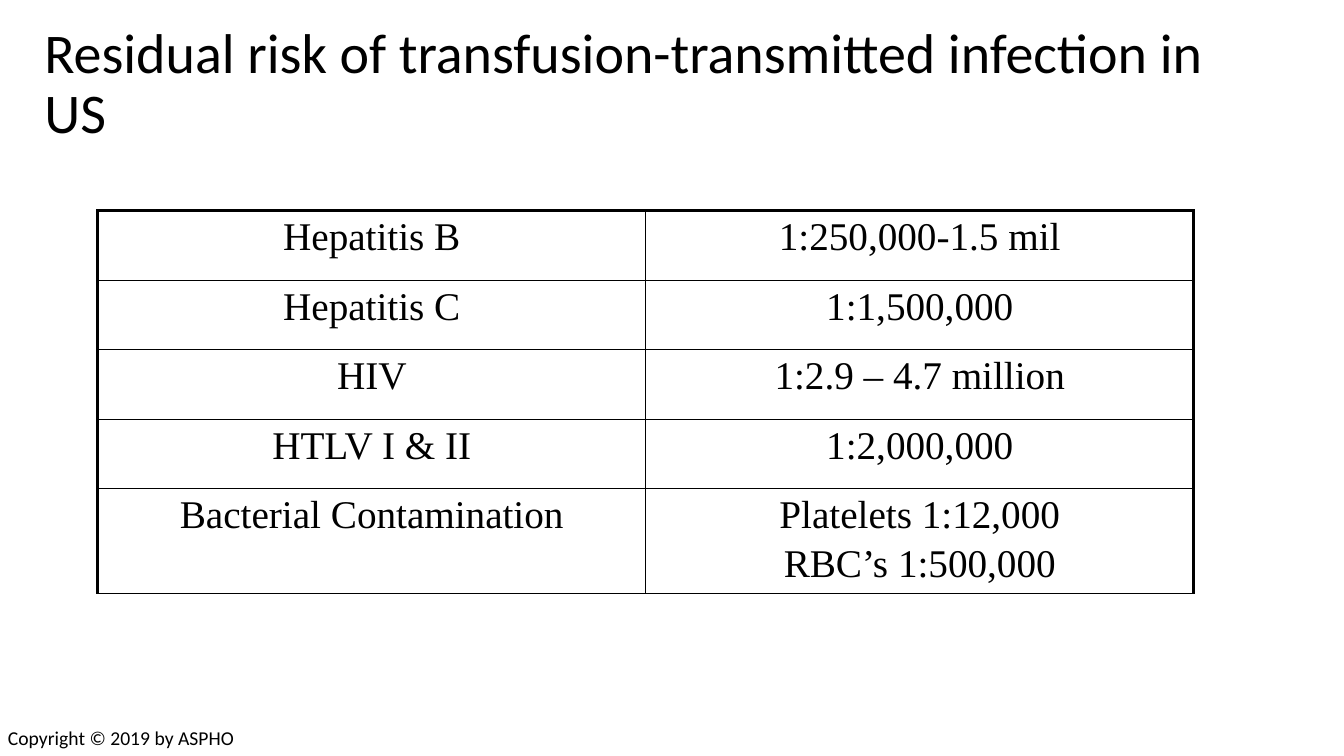
from lxml import etree
from pptx import Presentation
from pptx.dml.color import RGBColor
from pptx.enum import text
from pptx.oxml import ns
from pptx.util import Inches, Pt

BLACK = "000000"
RISKS = [
    ("Hepatitis B", "1:250,000-1.5 mil"),
    ("Hepatitis C", "1:1,500,000"),
    ("HIV", "1:2.9 – 4.7 million"),
    ("HTLV I & II", "1:2,000,000"),
    ("Bacterial Contamination", "Platelets 1:12,000\nRBC’s 1:500,000"),
]
ROW_HEIGHTS = [0.69] * 4 + [1.04]


def paint(color_format, color):
    color_format.rgb = RGBColor.from_string(color)


def style(paragraph, font_name, size, align):
    paragraph.alignment = align
    paragraph.font.name = font_name
    paragraph.font.size = Pt(size)
    paragraph.font.fill.solid()
    paint(paragraph.font.fill.fore_color, BLACK)


def add_border(cell, side, width):
    line = etree.SubElement(cell._tc.get_or_add_tcPr(), ns.qn(f"a:{side}"), w=str(Pt(width)))
    fill = etree.SubElement(line, ns.qn("a:solidFill"))
    etree.SubElement(fill, ns.qn("a:srgbClr"), val=BLACK)


def add_title(slide, left, top, width, height):
    title = slide.shapes.title
    title.left, title.top = Inches(left), Inches(top)
    title.width, title.height = Inches(width), Inches(height)
    frame = title.text_frame
    frame.text = "Residual risk of transfusion-transmitted infection in US"
    frame.vertical_anchor = text.MSO_ANCHOR.MIDDLE
    frame.auto_size = text.MSO_AUTO_SIZE.NONE
    heading = frame.paragraphs[0]
    heading.line_spacing = 0.9
    style(heading, "Calibri", 40, text.PP_ALIGN.LEFT)


def fill_risk_cell(cell, wording, borders):
    cell.text = wording
    cell.margin_left = cell.margin_right = Inches(0.13)
    cell.margin_top = cell.margin_bottom = Inches(0.05)
    cell.vertical_anchor = text.MSO_ANCHOR.TOP
    for index, paragraph in enumerate(cell.text_frame.paragraphs):
        if index:
            paragraph.space_before = Pt(4)
        style(paragraph, "Times New Roman", 28, text.PP_ALIGN.CENTER)
    for side, width in borders.items():
        add_border(cell, side, width)
    cell.fill.background()


def add_risk_table(slide, left, top, width):
    risk_table = slide.shapes.add_table(
        len(RISKS), 2, Inches(left), Inches(top), Inches(width), Inches(sum(ROW_HEIGHTS))
    ).table
    risk_table.first_row = risk_table.horz_banding = False
    for column in risk_table.columns:
        column.width = Inches(width / 2)
    for row, (risk, height) in enumerate(zip(RISKS, ROW_HEIGHTS)):
        risk_table.rows[row].height = Inches(height)
        for column, wording in enumerate(risk):
            borders = {
                "lnL": 2.25 if column == 0 else 1,
                "lnR": 2.25 if column == 1 else 1,
                "lnT": 2.25 if row == 0 else 1,
                "lnB": 1,
            }
            fill_risk_cell(risk_table.cell(row, column), wording, borders)


def add_copyright(slide, left, top, width, height):
    frame = slide.shapes.add_textbox(
        Inches(left), Inches(top), Inches(width), Inches(height)
    ).text_frame
    frame.word_wrap = True
    frame.auto_size = text.MSO_AUTO_SIZE.SHAPE_TO_FIT_TEXT
    frame.text = "Copyright © 2019 by ASPHO"
    style(frame.paragraphs[0], "Calibri", 14, text.PP_ALIGN.LEFT)


def main():
    deck = Presentation()
    deck.slide_width, deck.slide_height = Inches(13.33), Inches(7.5)
    slide = deck.slides.add_slide(deck.slide_layouts[5])
    add_title(slide, 0.34, 0.22, 12.4, 1.25)
    add_risk_table(slide, 0.97, 2.09, 10.87)
    add_copyright(slide, -0.02, 7.15, 3.4, 0.34)
    deck.save("out.pptx")


if __name__ == "__main__":
    main()
